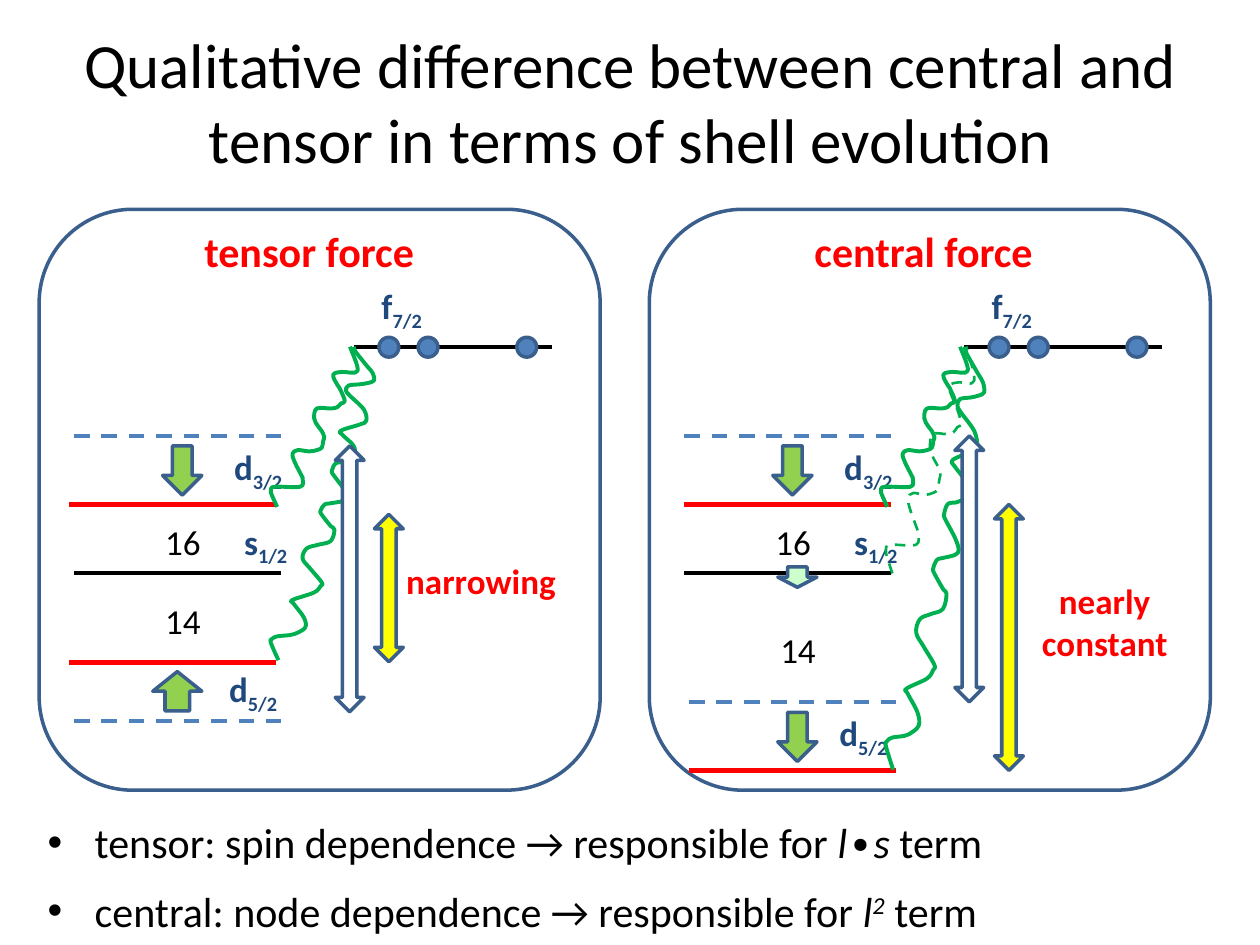
from lxml import etree
from pptx import Presentation
from pptx.dml.color import RGBColor
from pptx.enum.dml import MSO_LINE
from pptx.enum.shapes import MSO_CONNECTOR, MSO_SHAPE
from pptx.enum.text import MSO_ANCHOR, PP_ALIGN
from pptx.oxml.ns import qn
from pptx.util import Cm, Pt

DASH = MSO_LINE.DASH
STRAIGHT = MSO_CONNECTOR.STRAIGHT
PANEL = MSO_SHAPE.ROUNDED_RECTANGLE
DOT = MSO_SHAPE.OVAL
DOWN = MSO_SHAPE.DOWN_ARROW
UP = MSO_SHAPE.UP_ARROW
GAP = MSO_SHAPE.UP_DOWN_ARROW
LEFT, CENTER = PP_ALIGN.LEFT, PP_ALIGN.CENTER
TOP, MIDDLE = MSO_ANCHOR.TOP, MSO_ANCHOR.MIDDLE

COLORS = {
    "black": "000000", "white": "FFFFFF", "red": "FF0000", "yellow": "FFFF00",
    "blue": "4F81BD", "outline": "3A5F8C", "navy": "1F497D",
    "lime": "92D050", "pale": "CCFFCC", "green": "00B050",
}
PLAIN = {"size": Pt(20), "bold": False}
BOLD = {"size": Pt(20), "bold": True}
HEADING = {"size": Pt(24), "bold": True}
BODY = {"size": Pt(24), "bold": False}
TITLE = {"size": Pt(36), "bold": False}

LEVEL_WIDTH = 4.17
PANEL_SHIFT = 12.3
WAVE_TOP = 6.99
SHORT_WAVE = [
    (5, 127), (1, 118), (0, 114), (3, 111), (23, 111), (25, 105), (24, 102),
    (19, 92), (17, 85), (21, 82), (30, 83), (36, 82), (40, 80), (41, 75),
    (42, 72), (40, 67), (37, 63), (34, 57), (36, 49), (47, 49), (52, 48),
    (55, 45), (58, 43), (54, 33), (52, 30), (49, 24), (50, 21), (56, 20),
    (68, 19), (62, 0),
]
LONG_WAVE = [
    (6, 250), (0, 236), (1, 233), (5, 231), (15, 230), (19, 229), (27, 224),
    (26, 216), (18, 205), (17, 202), (34, 196), (39, 191), (40, 188),
    (31, 177), (25, 169), (28, 161), (37, 158), (47, 155), (50, 146),
    (47, 143), (40, 134), (39, 131), (42, 126), (46, 125), (57, 123),
    (60, 120), (57, 113), (49, 102), (48, 99), (51, 93), (58, 92), (62, 91),
    (66, 87), (65, 79), (57, 71), (55, 67), (70, 62), (75, 59), (73, 50),
    (62, 39), (59, 35), (61, 31), (70, 30), (76, 29), (81, 27), (80, 21),
    (76, 16), (68, 6), (66, 3), (65, 0),
]


def rgb(name):
    """Return the named colour."""
    return RGBColor.from_string(COLORS[name])


def style_line(line, color, width, dash=None):
    """Give a line its colour, width and dash."""
    line.color.rgb = rgb(color)
    line.width = Pt(width)
    if dash:
        line.dash_style = dash


def add_figure(page, kind, box, fill=None):
    """Draw an outlined preset shape."""
    figure = page.shapes.add_shape(kind, *map(Cm, box))
    figure.shadow.inherit = False
    if fill:
        figure.fill.solid()
        figure.fill.fore_color.rgb = rgb(fill)
    else:
        figure.fill.background()
    style_line(figure.line, "outline", 2)


def add_level(page, left, top, color, width=2.25, dash=None, length=LEVEL_WIDTH):
    """Draw a horizontal energy level."""
    level = page.shapes.add_connector(
        STRAIGHT, Cm(left), Cm(top), Cm(left + length), Cm(top))
    style_line(level.line, color, width, dash)
    etree.SubElement(level._element.spPr, qn("a:effectLst"))


def round_corners(wave):
    """Turn the straight segments of a freeform into smooth Bezier curves."""
    points = [(int(node.get("x")), int(node.get("y")))
              for node in wave._element.iter(qn("a:pt"))]
    padded = [points[0], *points, points[-1]]
    segments = list(wave._element.iter(qn("a:lnTo")))
    for segment, a, b, c, d in zip(segments, padded, padded[1:], padded[2:], padded[3:]):
        first = [q + (r - p) // 6 for p, q, r in zip(a, b, c)]
        second = [r - (s - q) // 6 for q, r, s in zip(b, c, d)]
        segment.tag = qn("a:cubicBezTo")
        for place, (x, y) in enumerate((first, second)):
            node = etree.Element(qn("a:pt"), x=str(x), y=str(y))
            segment.insert(place, node)


def add_wave(page, points, left, width, height, weight=2.25, dash=None):
    """Draw a wavy interaction line scaled to a width and height."""
    across = width / max(x for x, _ in points)
    down = height / max(y for _, y in points)
    corners = [(Cm(left + x * across), Cm(WAVE_TOP + y * down)) for x, y in points]
    builder = page.shapes.build_freeform(*corners[0])
    builder.add_line_segments(corners[1:], close=False)
    wave = builder.convert_to_shape()
    round_corners(wave)
    wave.shadow.inherit = False
    wave.fill.background()
    style_line(wave.line, "green", weight, dash)


def add_span(para, text, style, color, italic=False, baseline=0):
    """Append a formatted run to a paragraph."""
    span = para.add_run()
    span.text = text
    for name, value in {**style, "name": "Calibri", "italic": italic}.items():
        setattr(span.font, name, value)
    span.font.color.rgb = rgb(color)
    if baseline:
        span._r.get_or_add_rPr().set("baseline", str(baseline * 1000))


def add_text(page, box, lines, style, color, align=LEFT, anchor=TOP, wrap=False):
    """Add a text box whose lines are lists of (text, options) and return its frame."""
    frame = page.shapes.add_textbox(*map(Cm, box)).text_frame
    frame.word_wrap = wrap
    frame.vertical_anchor = anchor
    for index, spans in enumerate(lines):
        para = frame.paragraphs[0] if index == 0 else frame.add_paragraph()
        para.alignment = align
        for text, options in spans:
            add_span(para, text, style, color, **options)
    return frame


def add_orbit(page, left, top, width, letter, spin):
    """Label an orbit with its letter and subscript spin."""
    spans = [(letter, {}), (spin, {"baseline": -25})]
    add_text(page, (left, top, width, 1.12), [spans], BOLD, "navy")


def add_number(page, left, top, number):
    """Write a shell gap number."""
    add_text(page, (left, top, 1.24, 1.12), [[(number, {})]], PLAIN, "black")


def add_panel(page, shift, heading, heading_width, upper_left):
    """Draw what both force panels share."""
    add_figure(page, PANEL, (0.79 + shift, 4.22, 11.31, 11.71))
    add_text(page, (3.87 + shift, 4.42, heading_width, 1.3), [[(heading, {})]],
             HEADING, "red")
    add_level(page, 7.14 + shift, 7, "black", length=3.98)
    for left in (7.64, 8.43, 10.42):
        add_figure(page, DOT, (left + shift, 6.8, 0.4, 0.4), "blue")
    add_level(page, 1.49 + shift, 8.79, "blue", dash=DASH)
    add_level(page, upper_left, 10.17, "red", 3)
    add_level(page, 1.49 + shift, 11.56, "black")
    add_figure(page, DOWN, (3.28 + shift, 8.99, 0.79, 0.99), "lime")
    add_orbit(page, 7.44 + shift, 5.61, 1.42, "f", "7/2")
    add_orbit(page, 4.47 + shift, 8.86, 1.57, "d", "3/2")
    add_orbit(page, 4.67 + shift, 10.36, 1.5, "s", "1/2")
    add_number(page, 3.08 + shift, 10.36, "16")
    add_wave(page, SHORT_WAVE, 5.46 + shift, 1.75, 3.23)


def add_tensor(page):
    """Draw the tensor force panel."""
    add_panel(page, 0, "tensor force", 5.46, 1.4)
    add_level(page, 1.4, 13.35, "red", 3)
    add_level(page, 1.49, 14.53, "blue", dash=DASH)
    add_figure(page, UP, (3.08, 13.54, 0.99, 0.79), "lime")
    add_orbit(page, 4.37, 13.34, 1.57, "d", "5/2")
    add_number(page, 3.08, 11.96, "14")
    add_wave(page, LONG_WAVE, 5.46, 2.08, 6.32)
    add_figure(page, GAP, (7.55, 10.37, 0.58, 2.97), "yellow")
    add_figure(page, GAP, (6.76, 8.99, 0.58, 5.36), "white")
    add_text(page, (7.94, 11.15, 3.96, 1.12), [[("narrowing", {})]], BOLD, "red")


def add_central(page):
    """Draw the central force panel."""
    add_panel(page, PANEL_SHIFT, "central force", 5.64, 13.79)
    add_level(page, 13.89, 14.15, "blue", dash=DASH)
    add_level(page, 13.89, 15.53, "red", 3)
    add_figure(page, DOWN, (15.68, 14.36, 0.79, 0.99), "lime")
    add_figure(page, DOWN, (15.68, 11.43, 0.79, 0.41), "pale")
    add_orbit(page, 16.67, 14.22, 1.57, "d", "5/2")
    add_number(page, 15.48, 12.55, "14")
    add_wave(page, LONG_WAVE, 17.86, 1.98, 8.53)
    add_figure(page, GAP, (20.05, 10.17, 0.58, 5.36), "yellow")
    add_figure(page, GAP, (19.25, 8.79, 0.58, 5.36), "white")
    add_wave(page, SHORT_WAVE, 17.86, 1.78, 4.57, 1.5, DASH)
    lines = [[("nearly", {})], [("constant", {})]]
    add_text(page, (20.53, 11.56, 3.48, 1.96), lines, BOLD, "red", CENTER)


def add_summary(page):
    """Write the bulleted conclusions."""
    slanted = {"italic": True}
    lines = [
        [("tensor: spin dependence → responsible for ", {}), ("l∙s", slanted),
         (" term", {})],
        [("central: node dependence → responsible for ", {}), ("l", slanted),
         ("2", {"italic": True, "baseline": 30}), (" term", {})],
    ]
    frame = add_text(page, (0.71, 16.13, 24, 2.92), lines, BODY, "black", wrap=True)
    for para in frame.paragraphs:
        para.line_spacing = 1.2
        para.space_before = Pt(4.8)
        properties = para._p.get_or_add_pPr()
        properties.set("marL", str(Cm(0.95)))
        properties.set("indent", str(Cm(-0.95)))
        etree.SubElement(properties, qn("a:buFont"), typeface="Arial")
        etree.SubElement(properties, qn("a:buChar"), char="•")


def main():
    """Build and save the slide."""
    deck = Presentation()
    deck.slide_width, deck.slide_height = Cm(25.4), Cm(19.05)
    page = deck.slides.add_slide(deck.slide_layouts[6])
    title = "Qualitative difference between central and tensor in terms of shell evolution"
    add_text(page, (0.71, 0.53, 24, 3), [[(title, {})]], TITLE, "black",
             CENTER, MIDDLE, True)
    add_tensor(page)
    add_central(page)
    add_summary(page)
    deck.save("out.pptx")


if __name__ == "__main__":
    main()
